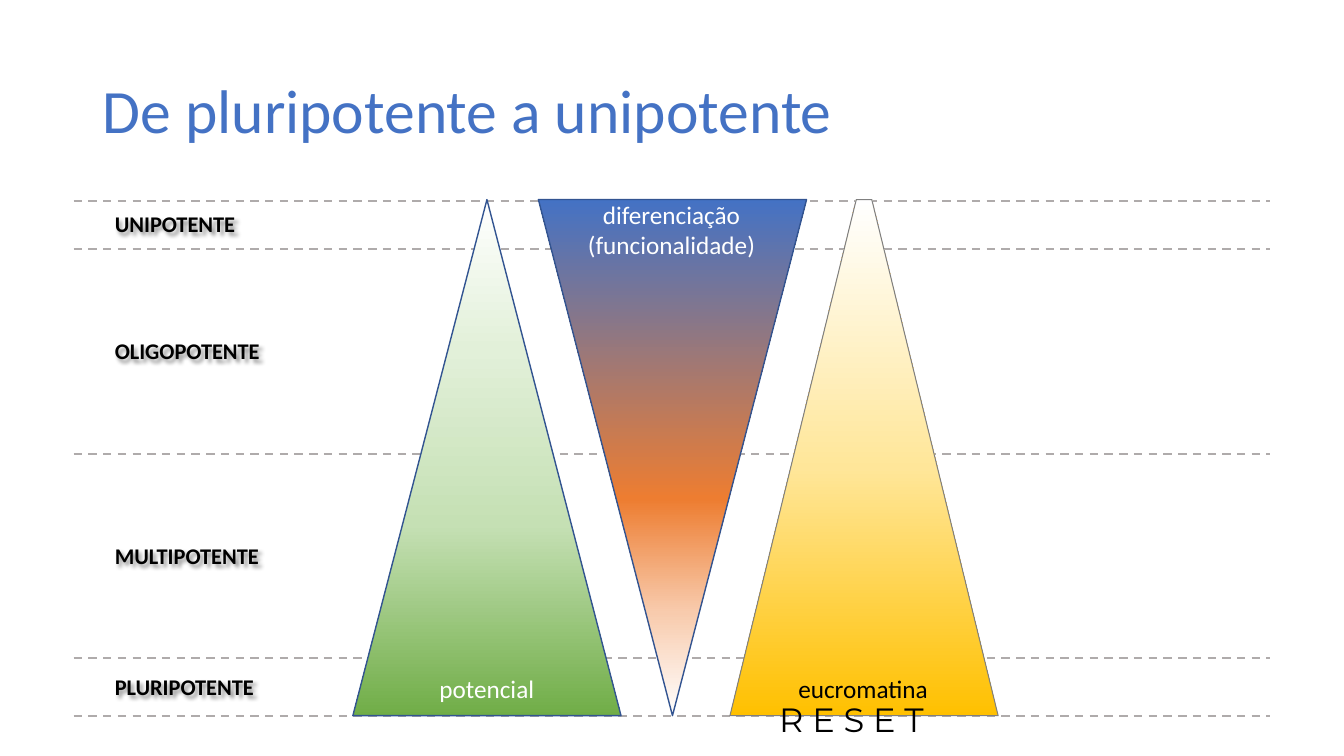
from lxml import etree
from pptx import Presentation
from pptx.dml.color import RGBColor
from pptx.enum.dml import MSO_LINE
from pptx.enum.shapes import MSO_CONNECTOR, MSO_SHAPE
from pptx.enum.text import MSO_ANCHOR, MSO_AUTO_SIZE, PP_ALIGN
from pptx.oxml.ns import qn
from pptx.util import Inches, Pt

STRAIGHT, DASH = MSO_CONNECTOR.STRAIGHT, MSO_LINE.DASH
TRIANGLE, TRAPEZOID = MSO_SHAPE.ISOSCELES_TRIANGLE, MSO_SHAPE.TRAPEZOID
MIDDLE = MSO_ANCHOR.MIDDLE
FIT, NO_FIT = MSO_AUTO_SIZE.SHAPE_TO_FIT_TEXT, MSO_AUTO_SIZE.NONE
LEFT, CENTER = PP_ALIGN.LEFT, PP_ALIGN.CENTER

BLACK = RGBColor(0x00, 0x00, 0x00)
WHITE = RGBColor(0xFF, 0xFF, 0xFF)
GREY = RGBColor(0x80, 0x80, 0x80)
RULE_GREY = RGBColor(0xAF, 0xAB, 0xAB)
BLUE = RGBColor(0x44, 0x72, 0xC4)
NAVY = RGBColor(0x32, 0x54, 0x91)
GREENS = [(0, WHITE), (29, RGBColor(0xE2, 0xF0, 0xD9)),
          (63, RGBColor(0xC5, 0xE0, 0xB4)), (100, RGBColor(0x70, 0xAD, 0x47))]
ORANGES = [(0, WHITE), (20, RGBColor(0xF8, 0xCB, 0xAD)),
           (42, RGBColor(0xED, 0x7D, 0x31)), (100, BLUE)]
YELLOWS = [(0, RGBColor(0xFF, 0xC0, 0x00)), (48, RGBColor(0xFF, 0xE6, 0x99)),
           (100, WHITE)]

FONT = {"name": "Calibri", "size": Pt(18), "bold": False}


def inches(box):
    return [Inches(v) for v in box]


def write(p, text, color, **format_values):
    r = p.add_run()
    r.text = text
    for key, value in {**FONT, **format_values}.items():
        setattr(r.font, key, value)
    r.font.color.rgb = color


def add_text(s, box, text, color, wrap=False, align=LEFT, **format_values):
    tb = s.shapes.add_textbox(*inches(box))
    tf = tb.text_frame
    tf.word_wrap = wrap
    tf.auto_size = FIT
    tf.paragraphs[0].alignment = align
    write(tf.paragraphs[0], text, color, **format_values)
    return tb


def add_title(s, box, text):
    title = s.shapes.title
    title.left, title.top, title.width, title.height = inches(box)
    tf = title.text_frame
    tf.vertical_anchor = MIDDLE
    tf.auto_size = NO_FIT
    p = tf.paragraphs[0]
    p.alignment = LEFT
    p.line_spacing = 0.9
    write(p, text, BLUE, size=Pt(44))


def add_rules(s, left, right, levels):
    for y in levels:
        rule = s.shapes.add_connector(STRAIGHT, *inches((left, y, right, y)))
        rule.line.color.rgb = RULE_GREY
        rule.line.width = Pt(1.5)
        rule.line.dash_style = DASH
        etree.SubElement(rule.element.spPr, qn("a:effectLst"))


def add_shadow(shape):
    effects = etree.SubElement(shape.element.spPr, qn("a:effectLst"))
    shadow = etree.SubElement(effects, qn("a:outerShdw"), blurRad="38100",
                              dist="38100", dir="2700000", algn="tl")
    color = etree.SubElement(shadow, qn("a:srgbClr"), val=str(BLACK))
    etree.SubElement(color, qn("a:alpha"), val="43000")


def add_stage_labels(s, left, labels):
    for text, top, width in labels:
        label = add_text(s, (left, top, width, 0.37), text, BLACK,
                         size=Pt(16), bold=True)
        add_shadow(label)


def add_wedge(s, kind, box, stops, angle, outline, width):
    wedge = s.shapes.add_shape(kind, *inches(box))
    wedge.shadow.inherit = False
    wedge.line.color.rgb = outline
    wedge.line.width = Pt(width)
    wedge.fill.gradient()
    wedge.fill.gradient_angle = 360 - angle
    stop_list = wedge.element.spPr.find(".//" + qn("a:gsLst"))
    for stop in list(stop_list):
        stop_list.remove(stop)
    for position, color in stops:
        stop = etree.SubElement(stop_list, qn("a:gs"), pos=str(position * 1000))
        etree.SubElement(stop, qn("a:srgbClr"), val=str(color))
    return wedge


def add_wedges(s, top, width, height):
    # Potential
    add_wedge(s, TRIANGLE, (3.5, top, width, height), GREENS, 90, NAVY, 1)
    # Differentiation, pointing down
    down = add_wedge(s, TRIANGLE, (5.34, top, width, height), ORANGES, 90, NAVY, 1)
    down.element.spPr.find(qn("a:xfrm")).set("flipV", "1")
    add_text(s, (5.72, top - 0.05, 1.88, 0.71), "diferenciação (funcionalidade)",
             WHITE, wrap=True, align=CENTER)
    # Euchromatin
    eu = add_wedge(s, TRAPEZOID, (7.24, top, width, height), YELLOWS, 270, GREY, 0.75)
    eu.adjustments[0] = 0.471
    # Captions at the base
    caption_top = top + height - 0.47
    add_text(s, (4.26, caption_top, 1.15, 0.4), "potencial", WHITE)
    add_text(s, (7.82, caption_top, 1.5, 0.4), "eucromatina", BLACK)


def main():
    prs = Presentation()
    prs.slide_width, prs.slide_height = Inches(13.33), Inches(7.5)
    s = prs.slides.add_slide(prs.slide_layouts[5])

    add_rules(s, 0.73, 12.6, (1.99, 2.47, 4.5, 6.53, 7.1))
    add_title(s, (0.92, 0.4, 11.5, 1.45), "De pluripotente a unipotente")
    add_wedges(s, 1.98, 2.66, 5.12)
    add_stage_labels(s, 1.04, [("UNIPOTENTE", 2.04, 1.41),
                               ("OLIGOPOTENTE", 3.3, 1.66),
                               ("MULTIPOTENTE", 5.33, 1.65),
                               ("PLURIPOTENTE", 6.63, 1.6)])
    add_text(s, (7.63, 6.88, 1.89, 0.5), "R E S E T", BLACK,
             name="Montserrat", size=Pt(24))
    prs.save("out.pptx")


if __name__ == "__main__":
    main()
